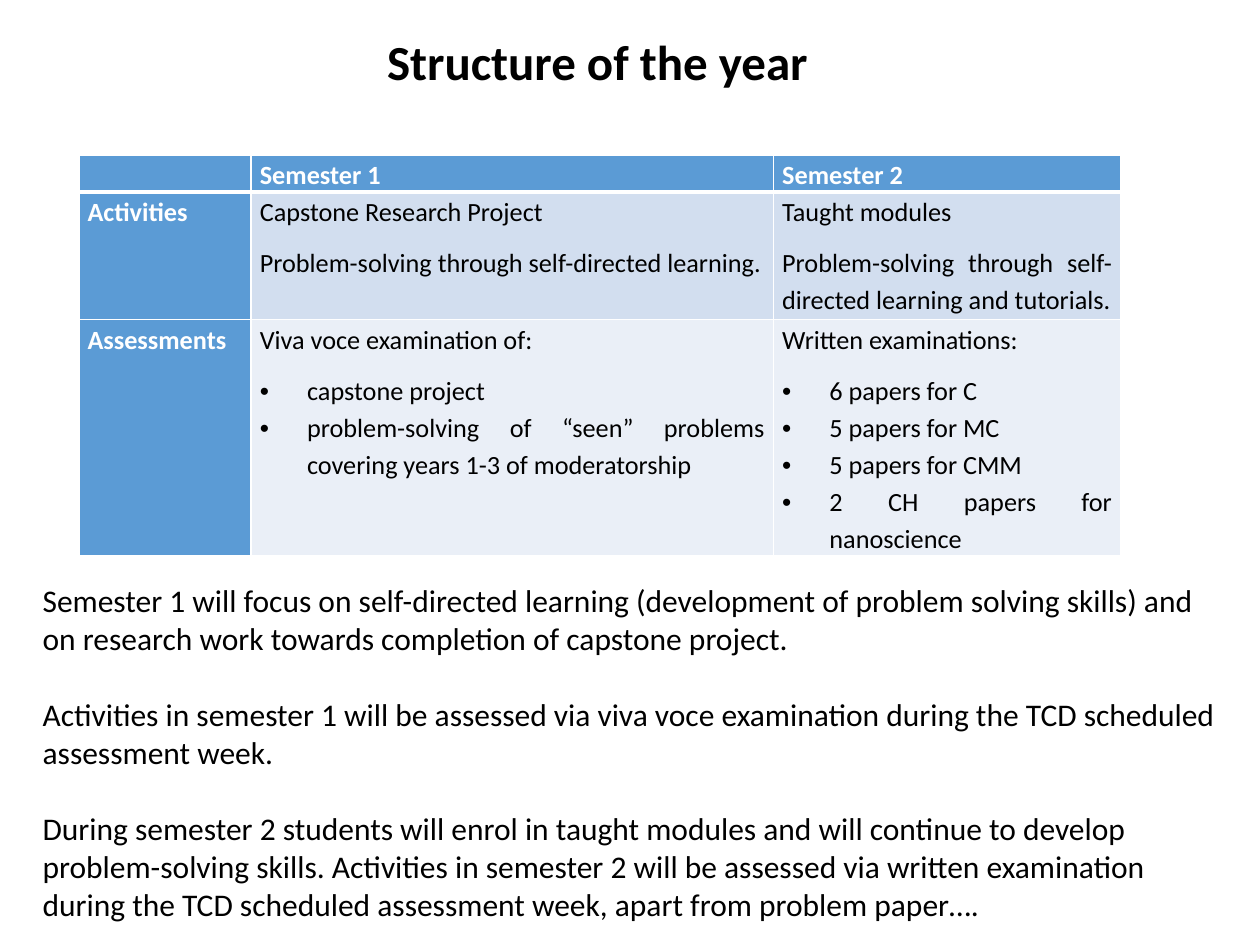
import pptx
import pptx.util
import pptx.dml.color
import pptx.enum.text
import pptx.oxml
import pptx.oxml.ns
from lxml import etree

Pt = pptx.util.Pt
RGBColor = pptx.dml.color.RGBColor
PP_ALIGN = pptx.enum.text.PP_ALIGN
MSO_ANCHOR = pptx.enum.text.MSO_ANCHOR
qn = pptx.oxml.ns.qn

BLACK = RGBColor(0x00, 0x00, 0x00)
WHITE = RGBColor(0xFF, 0xFF, 0xFF)
HEADING_BLUE = RGBColor(0x5B, 0x9B, 0xD5)
ROW_FILLS = [HEADING_BLUE, RGBColor(0xD2, 0xDE, 0xEF), RGBColor(0xEA, 0xEF, 0xF7)]
CELL_SIZE = 15


def add_text(paragraph, text, size, color, bold=False):
    run = paragraph.add_run()
    run.text = text
    run.font.name = "Calibri"
    run.font.size = Pt(size)
    run.font.bold = bold
    run.font.color.rgb = color


def add_border(cell, side, width):
    line = etree.SubElement(cell._tc.get_or_add_tcPr(), qn(f"a:{side}"), w=str(Pt(width)))
    fill = etree.SubElement(line, qn("a:solidFill"))
    etree.SubElement(fill, qn("a:srgbClr"), val=str(WHITE))


presentation = pptx.Presentation()
presentation.slide_width = Pt(720)
presentation.slide_height = Pt(540)
slide = presentation.slides.add_slide(presentation.slide_layouts[5])

# Title
title = slide.shapes.title
title.left, title.top, title.width, title.height = Pt(214), Pt(14.5), Pt(258), Pt(41)
title.text_frame.word_wrap = False
title.text_frame.vertical_anchor = MSO_ANCHOR.TOP
title.text_frame.paragraphs[0].alignment = PP_ALIGN.LEFT
add_text(title.text_frame.paragraphs[0], "Structure of the year", 28, BLACK, True)

# Semester table: each cell is a list of paragraphs, "•" marks a list item
semester_rows = [
    [[], ["Semester 1"], ["Semester 2"]],
    [
        ["Activities"],
        ["Capstone Research Project", "Problem-solving through self-directed learning."],
        ["Taught modules", "Problem-solving through self-directed learning and tutorials."],
    ],
    [
        ["Assessments"],
        ["Viva voce examination of:", "•capstone project",
         "•problem-solving of “seen” problems covering years 1-3 of moderatorship"],
        ["Written examinations:", "•6 papers for C", "•5 papers for MC",
         "•5 papers for CMM", "•2 CH papers for nanoscience"],
    ],
]
semesters_frame = slide.shapes.add_table(3, 3, Pt(45), Pt(88.5), Pt(595.5), Pt(223))
semesters = semesters_frame.table
for column, width in zip(semesters.columns, [98.5, 298.5, 198.5]):
    column.width = Pt(width)
for row, height in zip(semesters.rows, [19.5, 73, 114]):
    row.height = Pt(height)

for r, row_texts in enumerate(semester_rows):
    for c, cell_texts in enumerate(row_texts):
        cell = semesters.cell(r, c)
        cell.margin_left = cell.margin_right = Pt(5)
        cell.margin_top = cell.margin_bottom = 0
        heading = r == 0 or c == 0
        for side in ["lnL", "lnR", "lnT", "lnB"]:
            under_header = (r, side) in [(0, "lnB"), (1, "lnT")]
            add_border(cell, side, 3 if under_header else 1)
        cell.fill.solid()
        cell.fill.fore_color.rgb = HEADING_BLUE if heading else ROW_FILLS[r]

        # The empty corner cell keeps the row at the table's text size
        if not cell_texts:
            etree.SubElement(cell.text_frame.paragraphs[0]._p, qn("a:endParaRPr"),
                             sz=str(CELL_SIZE * 100))
        for i, text in enumerate(cell_texts):
            paragraph = cell.text_frame.paragraphs[0] if i == 0 else cell.text_frame.add_paragraph()
            paragraph.alignment = PP_ALIGN.JUSTIFY
            paragraph.line_spacing = 1.15
            is_item = text.startswith("•")
            is_last = i == len(cell_texts) - 1
            paragraph.space_after = Pt(0 if is_item and not is_last else 8)
            if is_item:
                properties = paragraph._p.get_or_add_pPr()
                properties.set("marL", str(Pt(27)))
                properties.set("indent", str(Pt(-27)))
                etree.SubElement(properties, qn("a:buFont"), typeface="Arial")
                etree.SubElement(properties, qn("a:buChar"), char="•")
            add_text(paragraph, text.lstrip("•"), CELL_SIZE, WHITE if heading else BLACK, heading)
semesters_frame.height = Pt(223)

# Explanation below the table
explanations = [
    "Semester 1 will focus on self-directed learning (development of problem solving skills) "
    "and on research work towards completion of capstone project.",
    "Activities in semester 1 will be assessed via viva voce examination during the TCD "
    "scheduled assessment week.",
    "During semester 2 students will enrol in taught modules and will continue to develop "
    "problem-solving skills. Activities in semester 2 will be assessed via written examination "
    "during the TCD scheduled assessment week, apart from problem paper….",
]
explanation = slide.shapes.add_textbox(Pt(17.3), Pt(328.5), Pt(692), Pt(204)).text_frame
explanation.word_wrap = True
for i, text in enumerate(explanations):
    paragraph = explanation.paragraphs[0] if i == 0 else explanation.add_paragraph()
    paragraph.space_before = Pt(22 if i else 0)
    add_text(paragraph, text, 18, BLACK)

presentation.save("out.pptx")
